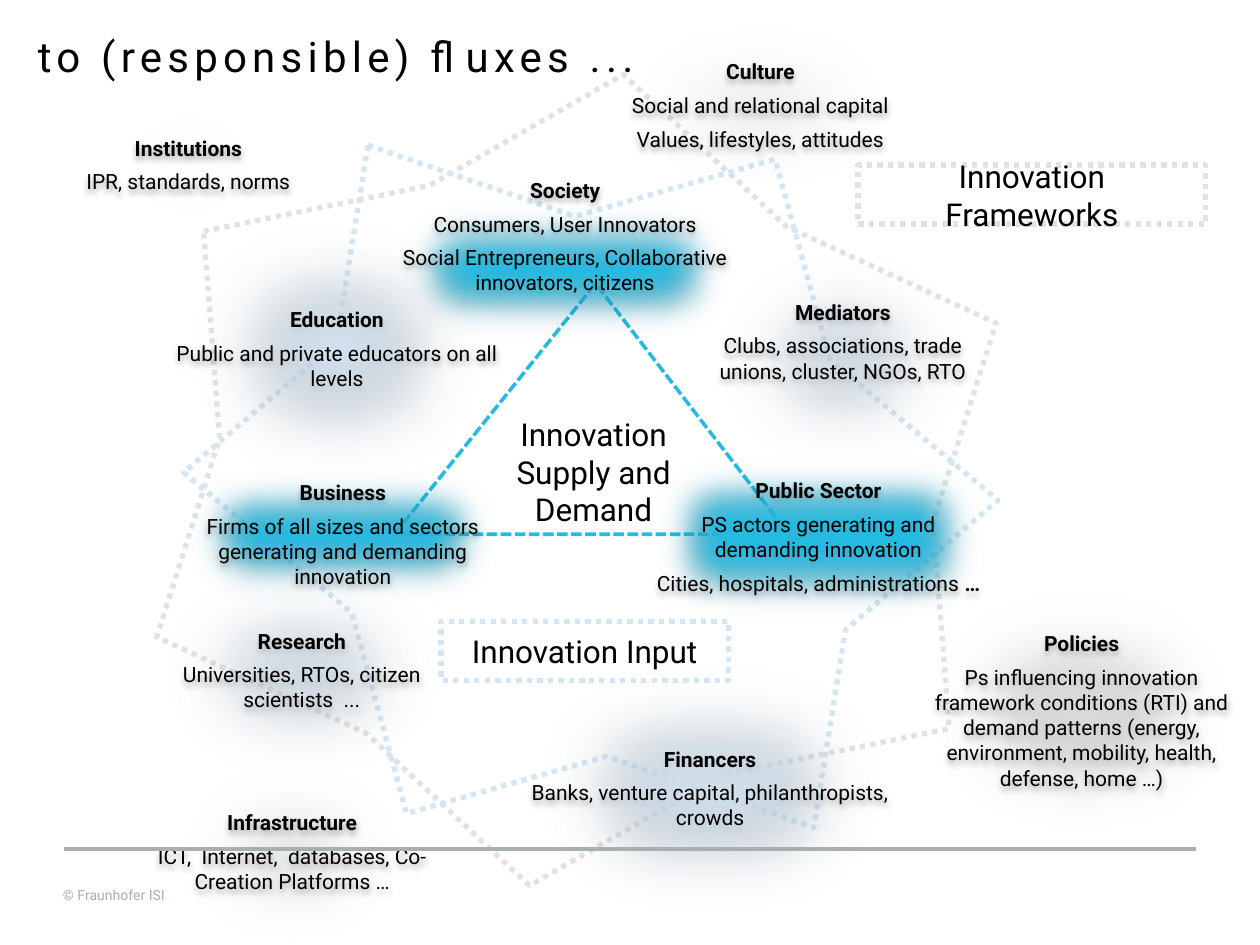
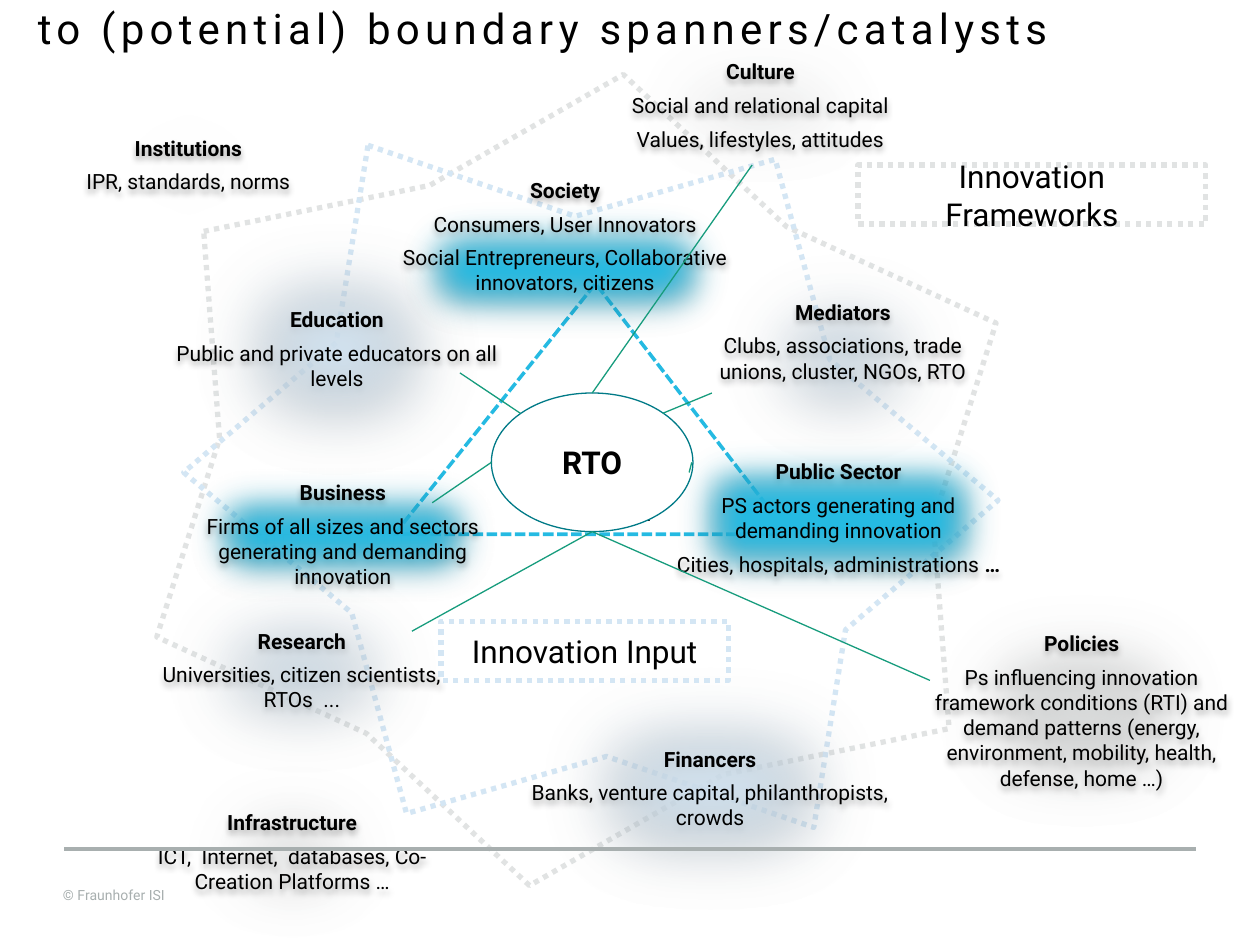
from lxml import etree
from pptx import Presentation
from pptx.dml.color import RGBColor
from pptx.enum.dml import MSO_LINE
from pptx.enum.shapes import MSO_CONNECTOR, MSO_SHAPE
from pptx.enum.text import MSO_ANCHOR, MSO_AUTO_SIZE, PP_ALIGN
from pptx.oxml import parse_xml
from pptx.oxml.ns import nsdecls, qn
from pptx.util import Pt

RECT, STAR, TRIANGLE, OVAL = (MSO_SHAPE.RECTANGLE, MSO_SHAPE.STAR_6_POINT,
                              MSO_SHAPE.ISOSCELES_TRIANGLE, MSO_SHAPE.OVAL)
STRAIGHT = MSO_CONNECTOR.STRAIGHT
DOTS, DASHES = MSO_LINE.ROUND_DOT, MSO_LINE.SQUARE_DOT
TOP, MIDDLE = MSO_ANCHOR.TOP, MSO_ANCHOR.MIDDLE
LEFT, CENTER = PP_ALIGN.LEFT, PP_ALIGN.CENTER
NO_FIT = MSO_AUTO_SIZE.NONE

FONT = "Roboto"
BLACK, WHITE, RULE_GREY = "000000", "FFFFFF", "A8AFAF"
FRAME_GREY, INPUT_BLUE, ACTOR_CYAN = "E1E3E3", "D4E6F4", "25BAE2"
TEAL, GREEN = "007A87", "179C7D"
BLANK_LINE = 18.9
color = RGBColor.from_string


def add_outline(page, kind, place, fill=None, line=None, width=0.75, dash=None):
    """Add a preset shape without shadow; place is left, top, width, height."""
    shape = page.shapes.add_shape(kind, *map(Pt, place))
    shape.shadow.inherit = False
    if fill:
        shape.fill.solid()
        shape.fill.fore_color.rgb = color(fill)
    else:
        shape.fill.background()
    if line:
        shape.line.color.rgb = color(line)
        shape.line.width = Pt(width)
        if dash:
            shape.line.dash_style = dash
    else:
        shape.line.fill.background()
    return shape


def write(box, texts, size=12, ink=BLACK, align=CENTER, anchor=MIDDLE, **margins):
    """Fill a box with paragraphs; words between ** marks are bold."""
    frame = box.text_frame
    settings = {"word_wrap": True, "auto_size": NO_FIT, "vertical_anchor": anchor}
    settings.update({f"margin_{side}": Pt(gap) for side, gap in margins.items()})
    for name, value in settings.items():
        setattr(frame, name, value)
    for number, text in enumerate(texts):
        para = frame.add_paragraph() if number else frame.paragraphs[0]
        para.alignment = align
        para.space_before, para.space_after = Pt(0), Pt(0.4 * size)
        for index, words in enumerate(text.split("**")):
            if words:
                span = para.add_run()
                span.text = words
                span.font.color.rgb = color(ink)
                for name, value in {"name": FONT, "size": Pt(size),
                                    "bold": index % 2 == 1}.items():
                    setattr(span.font, name, value)


# Each cloud: place, heading, lines, number of line heights the text is raised
FRAME_CLOUDS = [
    ((76.3, 414, 181.4, 145.4), "Infrastructure",
     ["ICT,  Internet,  databases, Co-Creation Platforms …"], 0),
    ((25.2, 31.7, 164.9, 124.6), "Institutions", ["IPR, standards, norms"], 0),
    ((331.9, -2.2, 205.2, 124.6), "Culture",
     ["Social and relational capital", "Values, lifestyles, attitudes"], 0),
    ((516.2, 321.1, 203.8, 169.9), "Policies",
     ["Ps influencing innovation framework conditions (RTI) and demand patterns "
      "(energy, environment, mobility, health, defense, home …)"], 0),
]
INPUT_CLOUDS = [
    ((87.8, 105.8, 209.5, 187.2), "Education",
     ["Public and private educators on all levels"], 0),
    ((286.6, 360.7, 238.3, 179.3), "Financers",
     ["Banks, venture capital, philanthropists, crowds"], 0),
    ((388.1, 122.4, 187.2, 164.2), "Mediators",
     ["Clubs, associations, trade unions, cluster, NGOs, RTO"], 1),
]
ACTOR_CLOUDS = [
    ((218.2, 105.8, 209.5, 96.5), "Society",
     ["Consumers, User Innovators",
      "Social Entrepreneurs, Collaborative innovators, citizens"], 2),
    ((99.4, 258.5, 193, 93.6), "Business",
     ["Firms of all sizes and sectors generating and demanding innovation"], 0),
]
STARS = [
    ((101.5, 41, 455.8, 466.6), 6.6, 0.39, FRAME_GREY),
    ((131, 63.4, 413.3, 429.1), 29.4, 0.35, INPUT_BLUE),
]
LABELS = [
    ((490.3, 94.3, 198.7, 33.8), "Innovation Frameworks", FRAME_GREY),
    ((252, 355, 164.2, 33.8), "Innovation Input", INPUT_BLUE),
]
# Each slide: title, title top, research text, left and top of Public Sector
SLIDES = [
    ("to (responsible) fluxes ...", 13.7,
     "Universities, RTOs, citizen scientists  ...", 365.8, 252.7),
    ("to (potential) boundary spanners/catalysts", -2.2,
     "Universities, citizen scientists, RTOs  ...", 377.3, 241.9),
]
RTO_LINKS = [
    (378.7, 236.2, 406.8, 224.6), (280.8, 264.2, 247, 287.3),
    (395.3, 264.2, 393.8, 270), (338.4, 303.8, 531.4, 388.8),
    (262.8, 213.1, 297.4, 236.2), (338.4, 224.6, 429.8, 94.3),
    (338.4, 303.8, 235.4, 360.7),
]

deck = Presentation()
deck.slide_width, deck.slide_height = Pt(720), Pt(540)

for title, title_top, research, sector_left, sector_top in SLIDES:
    page = deck.slides.add_slide(deck.slide_layouts[5])
    heading_box = page.shapes.title
    for name, value in {"left": 14.4, "top": title_top,
                        "width": 646.6, "height": 28.8}.items():
        setattr(heading_box, name, Pt(value))
    write(heading_box, [title], 24, align=LEFT, anchor=TOP)
    heading_box.text_frame.paragraphs[0].runs[0].font._element.set("spc", "300")

    footer = page.shapes.add_textbox(Pt(36), Pt(506.9), Pt(75), Pt(9.4))
    write(footer, ["© Fraunhofer ISI"], 8, RULE_GREY, LEFT, TOP,
          left=0, top=0, right=0, bottom=0)
    lines = [((36.7, 485.3, 683.3, 485.3), RULE_GREY, 2.5)]

    for place, angle, depth, tint in STARS:
        star = add_outline(page, STAR, place, line=tint, width=3, dash=DOTS)
        star.rotation = angle
        star.adjustments[0] = depth

    research_cloud = ((70.6, 303.8, 203.8, 158.4), "Research", [research], 0)
    sector_cloud = ((sector_left, sector_top, 203.8, 108), "Public Sector",
                    ["PS actors generating and demanding innovation",
                     "Cities, hospitals, administrations **…**"], 0)
    tiers = [
        (FRAME_CLOUDS, FRAME_GREY, 50),
        (INPUT_CLOUDS + [research_cloud], INPUT_BLUE, 50),
        (ACTOR_CLOUDS + [sector_cloud], ACTOR_CYAN, 25),
    ]
    for clouds, tint, soft_edge in tiers:
        if tint == ACTOR_CYAN:
            for place, text, label_tint in LABELS:
                label = add_outline(page, RECT, place, line=label_tint, width=3, dash=DOTS)
                write(label, [text], 18)
            triangle = add_outline(page, TRIANGLE, (225.4, 162, 225.4, 143.3),
                                   WHITE, ACTOR_CYAN, 2, DASHES)
            triangle.adjustments[0] = 0.51
            write(triangle, ["Innovation Supply and Demand"], 18)
        for place, heading, texts, raised in clouds:
            cloud = add_outline(page, RECT, place, tint)
            effects = cloud._element.spPr.find(qn("a:effectLst"))
            effects.append(parse_xml(
                f'<a:outerShdw {nsdecls("a")} blurRad="{Pt(3.5)}" dist="{Pt(2.2)}" '
                'dir="5400000" rotWithShape="0"><a:srgbClr val="000000">'
                '<a:alpha val="32000"/></a:srgbClr></a:outerShdw>'))
            etree.SubElement(effects, qn("a:softEdge"), rad=str(Pt(soft_edge)))
            write(cloud, [f"**{heading}**"] + texts, bottom=3.6 + raised * BLANK_LINE)

    if page is not deck.slides[0] and len(deck.slides) == 2:
        hub = add_outline(page, OVAL, (280.8, 224.6, 115.2, 79.2), WHITE, TEAL)
        write(hub, ["**RTO**"], 18)
        lines += [(ends, GREEN, 0.75) for ends in RTO_LINKS]

    for ends, tint, width in lines:
        link = page.shapes.add_connector(STRAIGHT, *map(Pt, ends))
        link.line.color.rgb = color(tint)
        link.line.width = Pt(width)
        etree.SubElement(link._element.spPr, qn("a:effectLst"))

deck.save("out.pptx")
